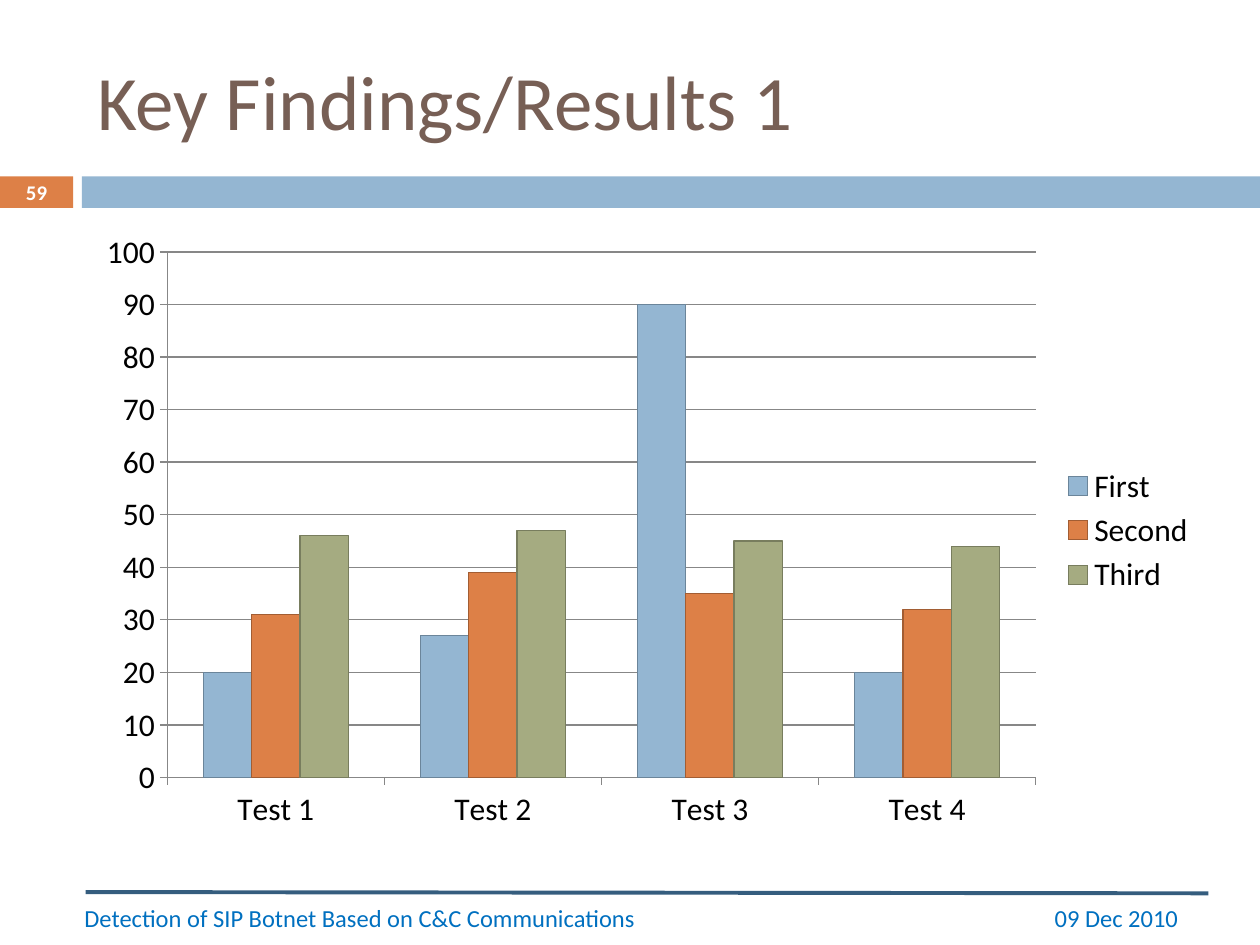
from lxml import etree
from pptx import Presentation
from pptx import util as u
from pptx.chart import data as chart_data
from pptx.dml.color import RGBColor
from pptx.enum import chart as ch, shapes, text
from pptx.oxml import ns

WIDTH, HEIGHT = 10, 7.5
LEFT, CONTENT_WIDTH = 0.67, 8.92
RIGHT = LEFT + CONTENT_WIDTH
BAND_TOP, BAND_HEIGHT, NUMBER_WIDTH = 1.4, 0.25, 0.58
FOOTER_TOP, FOOTER_HEIGHT = 7.08, 0.4

FONT = "Calibri"
BLUE = RGBColor(0x94, 0xB6, 0xD2)
ORANGE = RGBColor(0xDD, 0x80, 0x47)
GREEN = RGBColor(0xA5, 0xAB, 0x81)
NAVY = RGBColor(0x35, 0x5D, 0x7E)
BROWN = RGBColor(0x77, 0x5F, 0x55)
FOOTER_BLUE = RGBColor(0x00, 0x70, 0xC0)
GREY = RGBColor(0x87, 0x87, 0x87)
BLACK = RGBColor(0, 0, 0)
WHITE = RGBColor(0xFF, 0xFF, 0xFF)

TESTS = ["Test 1", "Test 2", "Test 3", "Test 4"]
RESULTS = [
    ("First", (20, 27, 90, 20), BLUE, RGBColor(0x6B, 0x85, 0x9A)),
    ("Second", (31, 39, 35, 32), ORANGE, RGBColor(0xA2, 0x5D, 0x33)),
    ("Third", (46, 47, 45, 44), GREEN, RGBColor(0x78, 0x7D, 0x5E)),
]


def inches(*lengths):
    return [u.Inches(length) for length in lengths]


def write(shape, words, size, color, bold=False,
          align=text.PP_ALIGN.LEFT, insets=(0.1, 0.05, 0.1, 0.05)):
    frame = shape.text_frame
    frame.word_wrap = True
    frame.auto_size = text.MSO_AUTO_SIZE.NONE
    frame.vertical_anchor = text.MSO_ANCHOR.MIDDLE
    (frame.margin_left, frame.margin_top,
     frame.margin_right, frame.margin_bottom) = inches(*insets)
    paragraph = frame.paragraphs[0]
    paragraph.alignment = align
    run = paragraph.add_run()
    run.text = words
    run.font.name = FONT
    run.font.size = u.Pt(size)
    run.font.bold = bold
    run.font.color.rgb = color


def add_band(slide, left, width, color):
    band = slide.shapes.add_shape(
        shapes.MSO_SHAPE.RECTANGLE,
        *inches(left, BAND_TOP, width, BAND_HEIGHT))
    band.shadow.inherit = False
    band.fill.solid()
    band.fill.fore_color.rgb = color
    band.line.fill.background()
    return band


def add_rule(slide):
    rule = slide.shapes.add_connector(
        shapes.MSO_CONNECTOR.STRAIGHT,
        *inches(0.68, FOOTER_TOP, RIGHT, FOOTER_TOP + 0.01))
    rule.line.color.rgb = NAVY
    rule.line.width = u.Pt(2.25)
    etree.SubElement(rule._element.spPr, ns.qn("a:effectLst"))


def add_footer(slide, words, left, width, inset):
    box = slide.shapes.add_textbox(
        *inches(left, FOOTER_TOP, width, FOOTER_HEIGHT))
    write(box, words, 14, FOOTER_BLUE, insets=(inset, 0.05, 0.1, 0.05))


def add_results_chart(slide):
    results = chart_data.CategoryChartData()
    results.categories = TESTS
    for name, values, *_ in RESULTS:
        results.add_series(name, values)
    chart = slide.shapes.add_chart(
        ch.XL_CHART_TYPE.COLUMN_CLUSTERED,
        *inches(LEFT, 1.75, CONTENT_WIDTH, 4.92), results).chart
    chart.has_title = False
    chart.font.name = FONT
    chart.font.size = u.Pt(18)
    chart.font.color.rgb = BLACK
    chart.has_legend = True
    chart.legend.position = ch.XL_LEGEND_POSITION.RIGHT
    chart.legend.include_in_layout = False

    plot = chart.plots[0]
    plot.gap_width = 150
    plot.overlap = 0
    plot.vary_by_categories = False
    for series, (_, _, color, edge) in zip(plot.series, RESULTS):
        series.format.fill.solid()
        series.format.fill.fore_color.rgb = color
        series.format.line.color.rgb = edge
        series.format.line.width = u.Pt(0.75)

    scale = chart.value_axis
    scale.minimum_scale, scale.maximum_scale, scale.major_unit = 0, 100, 10
    scale.has_major_gridlines = True
    for part in (scale, chart.category_axis, scale.major_gridlines):
        part.format.line.color.rgb = GREY
        part.format.line.width = u.Pt(0.75)
    for axis in (scale, chart.category_axis):
        axis.major_tick_mark = ch.XL_TICK_MARK.OUTSIDE


def main():
    deck = Presentation()
    deck.slide_width, deck.slide_height = inches(WIDTH, HEIGHT)
    slide = deck.slides.add_slide(deck.slide_layouts[5])

    number = add_band(slide, 0, NUMBER_WIDTH, ORANGE)
    write(number, "59", 11.9, WHITE, bold=True,
          align=text.PP_ALIGN.CENTER, insets=(0, 0, 0, 0))
    add_band(slide, 0.65, WIDTH - 0.65, BLUE)
    add_rule(slide)

    title = slide.shapes.title
    title.left, title.top, title.width, title.height = inches(
        LEFT, 0.25, CONTENT_WIDTH, 1.08)
    write(title, "Key Findings/Results 1", 44, BROWN)

    add_results_chart(slide)
    add_footer(slide, "09 Dec 2010", 6.67, 2.92, 1.7)
    add_footer(slide, "Detection of SIP Botnet Based on C&C Communications",
               LEFT, 5.93, 0)
    deck.save("out.pptx")


if __name__ == "__main__":
    main()
